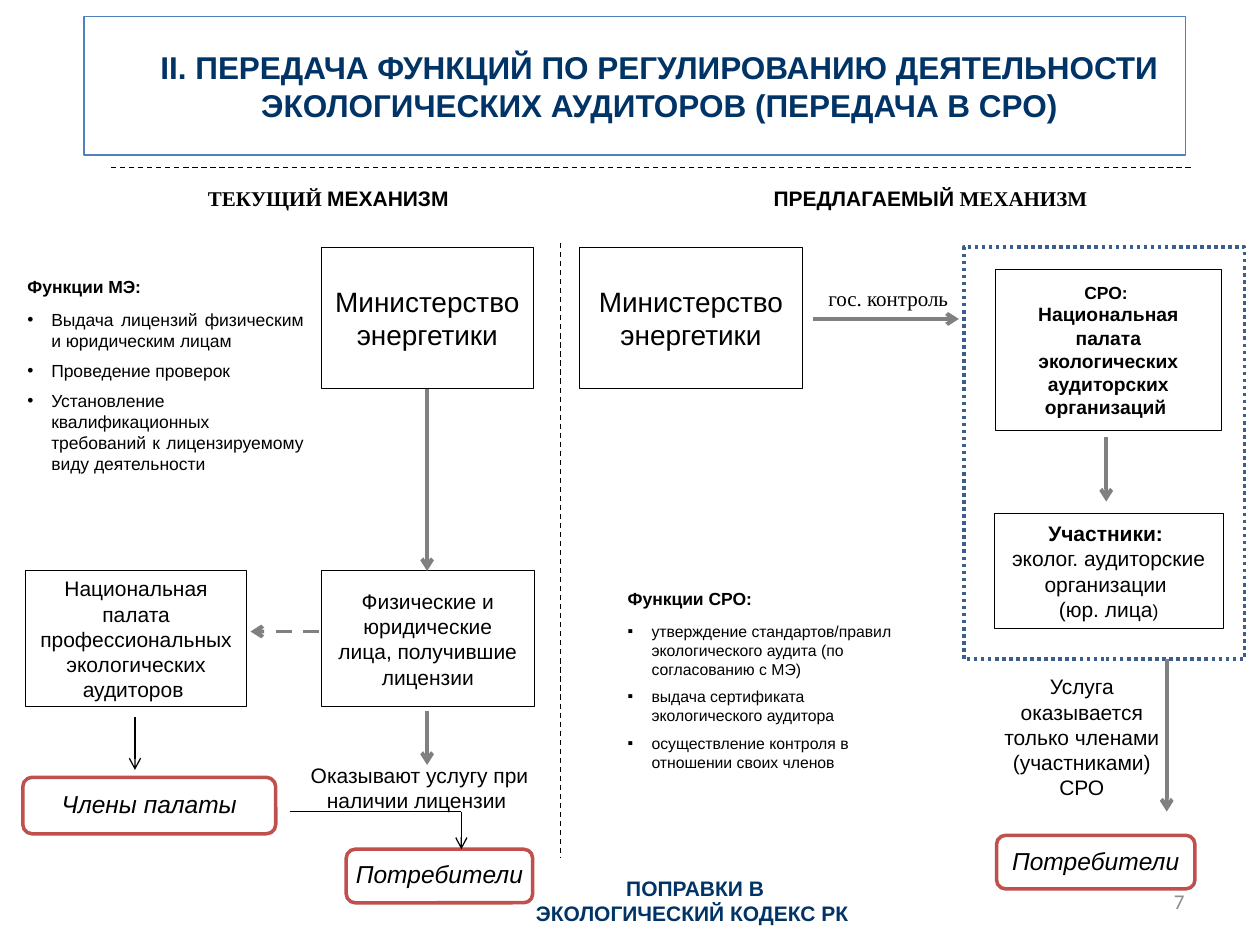
"""Build a slide on handing auditor regulation over to an SRO."""
from lxml.etree import SubElement
from pptx import Presentation
from pptx.dml.color import RGBColor
from pptx.enum.dml import MSO_LINE
from pptx.enum.shapes import MSO_CONNECTOR, MSO_SHAPE
from pptx.enum.text import MSO_ANCHOR, MSO_AUTO_SIZE, PP_ALIGN
from pptx.oxml.ns import qn
from pptx.util import Cm, Pt

SANS, SERIF = "Arial", "Times New Roman"
BLACK, GREY, NAVY, RED, BLUE = "000000", "808080", "003366", "C0504D", "3A5F8C"
INDENT = 0.99

TITLE = ("II. ПЕРЕДАЧА ФУНКЦИЙ ПО РЕГУЛИРОВАНИЮ ДЕЯТЕЛЬНОСТИ "
         "ЭКОЛОГИЧЕСКИХ АУДИТОРОВ (ПЕРЕДАЧА В СРО)")

LISTS = [
    ((0.3, 5.44, 6.07, 4.27), "Функции МЭ:", "•", 10, PP_ALIGN.JUSTIFY, [
        "Выдача лицензий физическим и юридическим лицам",
        "Проведение проверок",
        "Установление квалификационных требований к лицензируемому виду деятельности"]),
    ((12.4, 11.73, 5.92, 5), "Функции СРО:", "▪", 9, PP_ALIGN.LEFT, [
        "утверждение стандартов/правил экологического аудита (по согласованию с МЭ)",
        "выдача сертификата экологического аудитора",
        "осуществление контроля в отношении своих членов"]),
]

MINISTRY = [[("Министерство энергетики", 16)]]
BOXES = [
    ((6.48, 4.98, 4.27, 2.86), MINISTRY),
    ((11.68, 4.98, 4.5, 2.86), MINISTRY),
    ((20.07, 5.44, 4.55, 3.23), [
        [("СРО: ", 10, True)],
        [("Национальная палата экологических аудиторских организаций ", 11, True)]]),
    ((20.04, 10.36, 4.62, 2.31), [
        [("Участники: ", 12, True)],
        [("эколог. аудиторские организации ", 12)],
        [("(юр. лица", 12), (")", 10)]]),
    ((0.51, 11.51, 4.47, 2.74), [
        [("Национальная палата профессиональных экологических аудиторов ", 12)]]),
    ((6.48, 11.51, 4.29, 2.74), [
        [("Физические и юридические лица, получившие лицензии", 12)]]),
]

PILLS = [
    ((0.46, 15.67, 5.1, 1.14), "Члены палаты"),
    ((6.98, 17.12, 3.76, 1.08), "Потребители"),
    ((20.09, 16.84, 4, 1.08), "Потребители"),
]

LABELS = [
    ((3.86, 3.61, 5.64, 0.76), [
        [("ТЕКУЩИЙ ", 12, True, SERIF), ("МЕХАНИЗМ ", 12, True)]]),
    ((15.32, 3.61, 6.98, 0.76), [
        [("ПРЕДЛАГАЕМЫЙ", 12, True), (" МЕХАНИЗМ ", 12, True, SERIF)]]),
    ((15.32, 5.64, 5.28, 0.76), [[("гос. контроль ", 12, False, SERIF)]]),
    ((5.82, 15.24, 5.28, 1.27), [[("Оказывают услугу при наличии лицензии ", 12)]]),
    ((19.84, 13.46, 3.94, 2.82), [
        [("Услуга оказывается только членами (участниками) СРО", 12)]]),
]
FOOTER = [[("ПОПРАВКИ В", 12, True)], [("ЭКОЛОГИЧЕСКИЙ КОДЕКС РК ", 12, True)]]
NUMBER = [[("7", 12, False, "Calibri")]]

LINES = [
    ((2.24, 3.38, 24, 3.38), BLACK, 0.75, True, False),
    ((11.3, 4.9, 11.3, 17.3), BLACK, 0.75, True, False),
    ((6.43, 12.73, 5.05, 12.73), GREY, 2.25, True, True),
    ((8.61, 7.84, 8.61, 11.51), GREY, 2.25, False, True),
    ((8.61, 14.33, 8.61, 15.42), GREY, 2.25, False, True),
    ((16.38, 6.43, 19.33, 6.43), GREY, 2.25, False, True),
    ((22.3, 8.81, 22.3, 10.11), GREY, 2.25, False, True),
    ((23.52, 13.28, 23.52, 16.36), GREY, 2.25, False, True),
    ((2.72, 14.45, 2.72, 15.52), BLACK, 0.75, False, True),
    ((5.84, 16.36, 9.3, 16.36), BLACK, 0.75, False, False),
    ((9.3, 16.36, 9.3, 17.12), BLACK, 0.75, False, True),
]


def paint(color, code):
    color.rgb = RGBColor.from_string(code)


def style(run, size, bold=False, name=SANS, code=BLACK):
    font = run.font
    font.size, font.bold, font.name = Pt(size), bold, name
    paint(font.color, code)


def edge(shape, code, width):
    paint(shape.line.color, code)
    shape.line.width = Pt(width)


def place(shape, at):
    shape.left, shape.top, shape.width, shape.height = map(Cm, at)


def indent(para, left, first=0):
    props = para._p.get_or_add_pPr()
    props.set("marL", str(Cm(left)))
    props.set("indent", str(Cm(first)))
    return props


def write(shape, paras, code=BLACK, align=PP_ALIGN.CENTER):
    frame = shape.text_frame
    frame.word_wrap = True
    frame.text = "\n".join("" for _ in paras)
    for para, runs in zip(frame.paragraphs, paras):
        para.alignment = align
        for text, *look in runs:
            run = para.add_run()
            run.text = text
            style(run, *look, code=code)
    return frame


def block(slide, kind, at):
    shape = slide.shapes.add_shape(kind, *map(Cm, at))
    shape.shadow.inherit = False
    shape.fill.background()
    shape.text_frame.vertical_anchor = MSO_ANCHOR.MIDDLE
    return shape


def label(slide, at, paras, code=BLACK, align=PP_ALIGN.CENTER):
    return write(slide.shapes.add_textbox(*map(Cm, at)), paras, code, align)


def link(slide, ends, code, width, dash, arrow):
    line = slide.shapes.add_connector(MSO_CONNECTOR.STRAIGHT, *map(Cm, ends))
    edge(line, code, width)
    if dash:
        line.line.dash_style = MSO_LINE.DASH
    if arrow:
        SubElement(line.line._get_or_add_ln(), qn("a:tailEnd"), type="arrow")
    SubElement(line._element.spPr, qn("a:effectLst"))


def fill_list(shape, at, head, mark, size, align, items):
    place(shape, at)
    frame = write(shape, [[(head, 10, True)]] + [[(item, size)] for item in items],
                  align=align)
    frame.auto_size = MSO_AUTO_SIZE.NONE
    for pos, para in enumerate(frame.paragraphs):
        para.space_before = Pt((0, 7, 5)[min(pos, 2)])
        if pos:
            SubElement(indent(para, 0.48, -0.48), qn("a:buChar"), char=mark)
        else:
            SubElement(indent(para, 0), qn("a:buNone"))


def main():
    deck = Presentation()
    deck.slide_width, deck.slide_height = Cm(25.4), Cm(19.05)
    slide = deck.slides.add_slide(deck.slide_layouts[3])
    title, *bodies = slide.placeholders
    place(title, (1.7, 0.33, 22.2, 2.79))
    title.fill.solid()
    paint(title.fill.fore_color, "FFFFFF")
    edge(title, "4F81BD", 1)
    frame = write(title, [[(TITLE, 18, True)]], NAVY)
    frame.auto_size = MSO_AUTO_SIZE.NONE
    indent(frame.paragraphs[0], INDENT)
    for body, data in zip(bodies, LISTS):
        fill_list(body, *data)

    area = block(slide, MSO_SHAPE.RECTANGLE, (19.43, 4.98, 5.66, 8.31))
    edge(area, BLUE, 2)
    area.line.dash_style = MSO_LINE.ROUND_DOT
    for at, paras in BOXES:
        box = block(slide, MSO_SHAPE.RECTANGLE, at)
        edge(box, BLACK, 0.5)
        write(box, paras)
    for at, text in PILLS:
        pill = block(slide, MSO_SHAPE.ROUNDED_RECTANGLE, at)
        edge(pill, RED, 2)
        frame = write(pill, [[(text, 14)]])
        frame.margin_left = frame.margin_right = 0
        para = frame.paragraphs[0]
        para.line_spacing = 0.9
        para.runs[0].font.italic = True
    for at, paras in LABELS:
        label(slide, at, paras)
    for para in label(slide, (9.53, 17.53, 7.98, 1.27), FOOTER, NAVY).paragraphs:
        indent(para, INDENT)
    frame = label(slide, (18.21, 17.65, 5.92, 1.02), NUMBER, "8C8C8C", PP_ALIGN.RIGHT)
    frame.vertical_anchor = MSO_ANCHOR.MIDDLE
    for data in LINES:
        link(slide, *data)
    deck.save("out.pptx")


if __name__ == "__main__":
    main()
